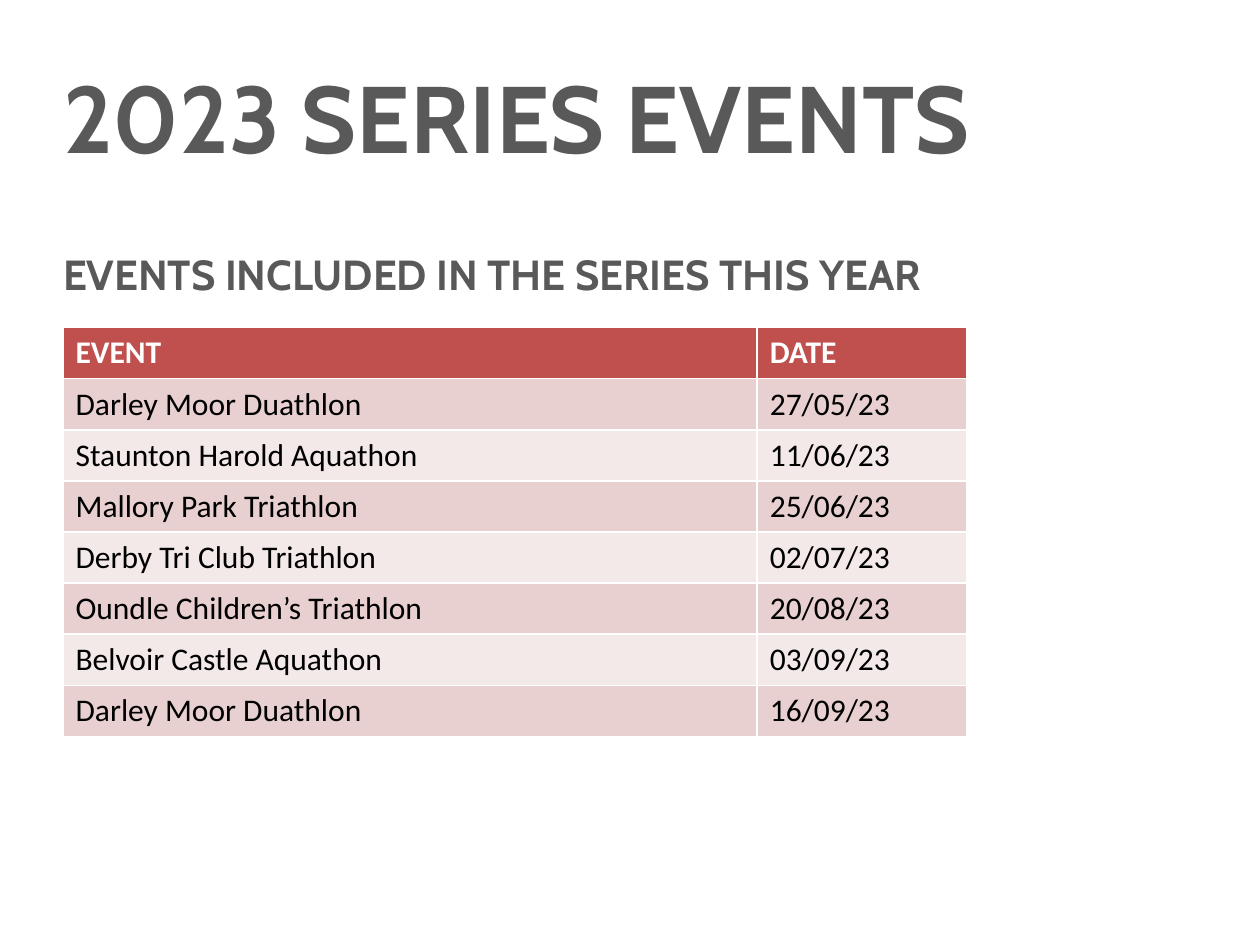
"""Build the slide that lists the 2023 series events and their dates."""
from lxml import etree
from pptx import Presentation
from pptx.dml.color import RGBColor
from pptx.enum.text import MSO_ANCHOR, MSO_AUTO_SIZE, PP_ALIGN
from pptx.oxml.ns import qn
from pptx.util import Inches, Pt

LEFT = PP_ALIGN.LEFT
MIDDLE, TOP = MSO_ANCHOR.MIDDLE, MSO_ANCHOR.TOP
FIXED = MSO_AUTO_SIZE.NONE
GREY, RED, WHITE, BLACK = "595959", "C0504D", "FFFFFF", "000000"
BANDS = ["F4E9E9", "E8D0D0"]


def color(code):
    """Turn a hex string into a colour."""
    return RGBColor.from_string(code)


def style(para, name, size, code, bold):
    """Set the font of every run in a paragraph."""
    for run in para.runs:
        font = run.font
        font.name, font.size, font.bold = name, Pt(size), bold
        font.color.rgb = color(code)


deck = Presentation()
deck.slide_width, deck.slide_height = Inches(10), Inches(7.5)
slide = deck.slides.add_slide(deck.slide_layouts[1])
title, body = slide.placeholders

heads = [
    (title, "2023 SERIES EVENTS", 54, MIDDLE, (0.5, 0.38, 9, 1.25)),
    (body, "EVENTS INCLUDED IN THE SERIES THIS YEAR", 24, TOP, (0.5, 1.92, 8.63, 4.25)),
]
for shape, text, size, anchor, place in heads:
    shape.left, shape.top, shape.width, shape.height = map(Inches, place)
    frame = shape.text_frame
    frame.text = text
    frame.word_wrap = True
    frame.auto_size = FIXED
    frame.vertical_anchor = anchor
    frame.margin_left = 0
    para = frame.paragraphs[0]
    para.alignment = LEFT
    para.space_before = Pt(0)
    style(para, "Cabin", size, GREY, True)

title.text_frame.paragraphs[0].line_spacing = 0.8
props = body.text_frame.paragraphs[0]._p.get_or_add_pPr()
props.set("marL", "0")
props.set("indent", "0")
etree.SubElement(props, qn("a:buNone"))

events = [
    ("EVENT", "DATE"),
    ("Darley Moor Duathlon", "27/05/23"),
    ("Staunton Harold Aquathon", "11/06/23"),
    ("Mallory Park Triathlon", "25/06/23"),
    ("Derby Tri Club Triathlon", "02/07/23"),
    ("Oundle Children’s Triathlon", "20/08/23"),
    ("Belvoir Castle Aquathon", "03/09/23"),
    ("Darley Moor Duathlon", "16/09/23"),
]
table = slide.shapes.add_table(
    len(events), 2, Inches(0.5), Inches(2.6), Inches(7.17), Inches(3.24)
).table
for col, width in zip(table.columns, (5.51, 1.66)):
    col.width = Inches(width)

for i, event in enumerate(events):
    head = i == 0
    for cell, text in zip(table.rows[i].cells, event):
        cell.text = text
        cell.fill.solid()
        cell.fill.fore_color.rgb = color(RED if head else BANDS[i % 2])
        style(cell.text_frame.paragraphs[0], "Calibri", 18, WHITE if head else BLACK, head)

deck.save("out.pptx")
